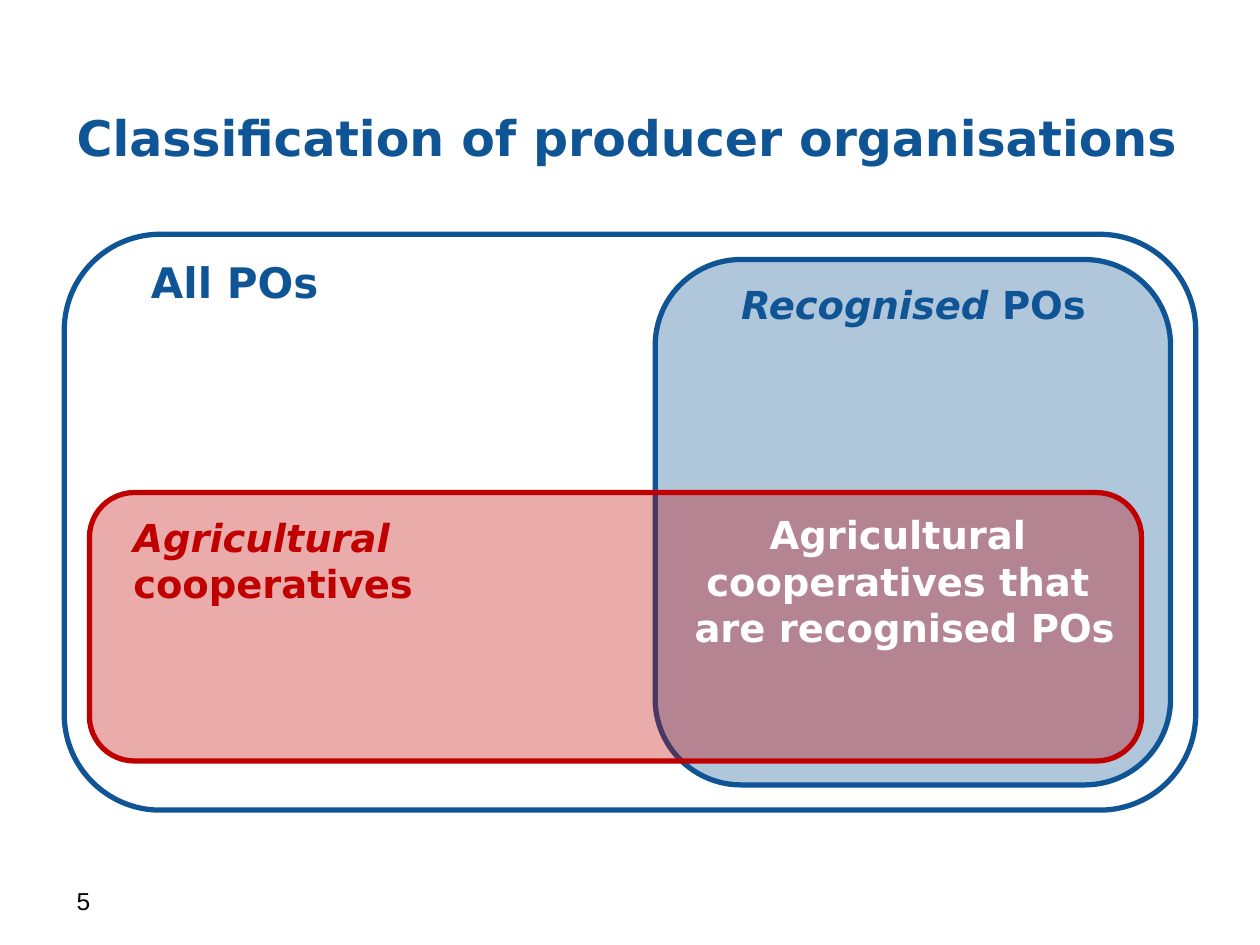
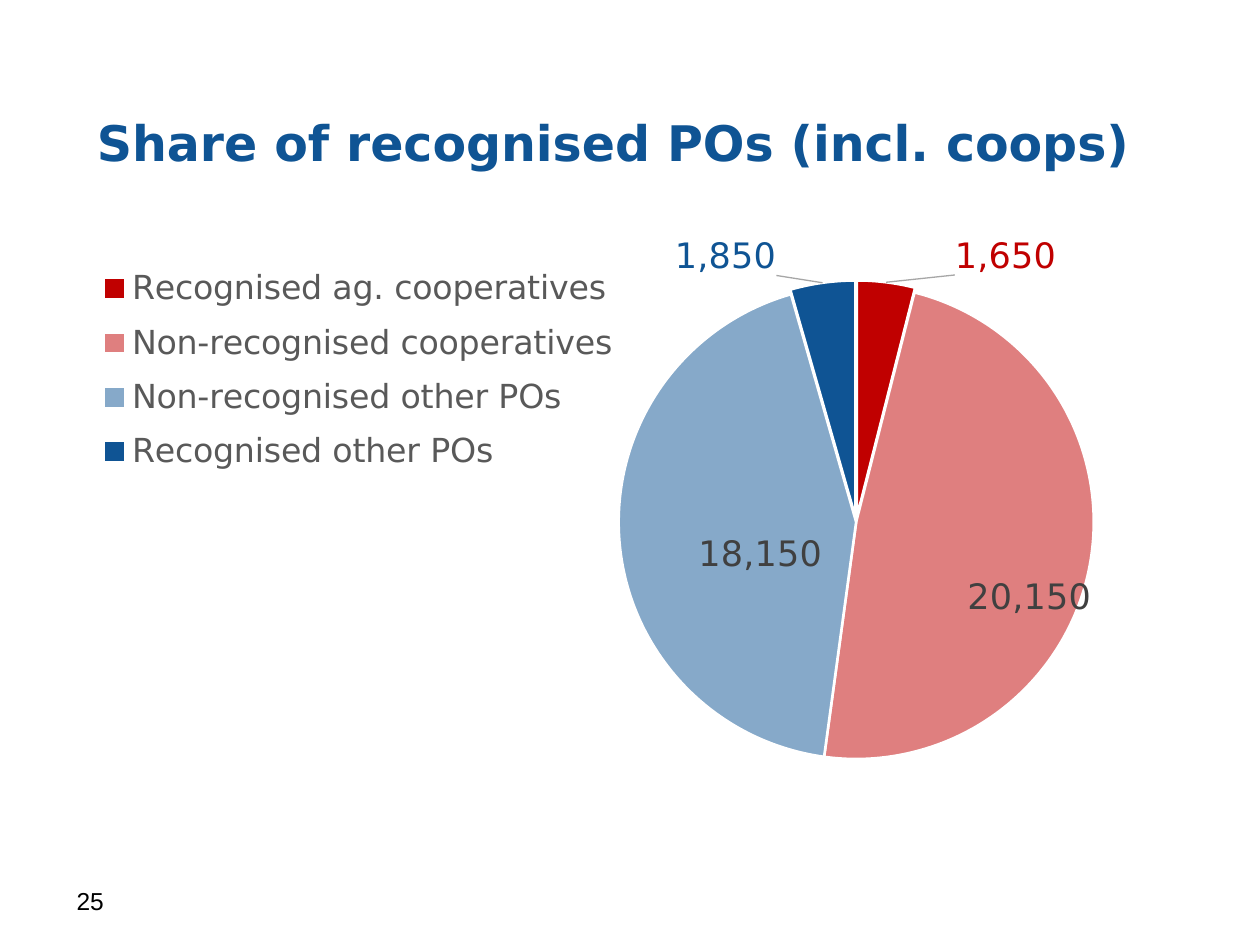
import pptx
import pptx.chart.data
import pptx.dml.color
import pptx.enum.chart
import pptx.enum.shapes
import pptx.enum.text
import pptx.util
from dataclasses import dataclass
from lxml import etree
from pptx.oxml.ns import qn

Inches = pptx.util.Inches
Pt = pptx.util.Pt
ALIGN = pptx.enum.text.PP_ALIGN
ANCHOR = pptx.enum.text.MSO_ANCHOR
LABEL_POSITION = pptx.enum.chart.XL_LABEL_POSITION


@dataclass(frozen=True)
class Theme:
    blue: str = "0F5494"
    red: str = "C00000"
    white: str = "FFFFFF"
    black: str = "000000"
    legend_grey: str = "595959"
    label_grey: str = "404040"
    leader_grey: str = "A6A6A6"
    font: str = "DejaVu Sans"
    number_font: str = "Arial"
    title: int = 28
    heading: int = 24
    group: int = 22
    label: int = 20
    legend: int = 19
    page_number: int = 14


THEME = Theme()


# Formatting helpers
def rgb(color):
    return pptx.dml.color.RGBColor.from_string(color)


def style_font(font, size, color, face=THEME.font, bold=False, italic=False):
    font.name, font.size, font.color.rgb = face, Pt(size), rgb(color)
    font.bold, font.italic = bold, italic


def set_alpha(owner, percent):
    """Make the fill of a shape or chart point see-through."""
    for color in owner.xpath("./*[local-name()='spPr']/a:solidFill/a:srgbClr"):
        etree.SubElement(color, qn("a:alpha"), val=str(percent * 1000))


def set_layout(owner, index, **settings):
    """Give a chart part a manual layout as fractions of the chart."""
    for old in owner.findall(qn("c:layout")):
        owner.remove(old)
    layout = etree.Element(qn("c:layout"))
    manual = etree.SubElement(layout, qn("c:manualLayout"))
    for tag, value in settings.items():
        etree.SubElement(manual, qn("c:" + tag), val=str(value))
    owner.insert(index, layout)


# Elements
def add_text(slide, box, text, size, color, face=THEME.font, bold=True,
             lead="", align=ALIGN.LEFT, anchor=ANCHOR.TOP, wrap=False):
    """Add text after an optional italic lead; a newline breaks the line."""
    frame = slide.shapes.add_textbox(*map(Inches, box)).text_frame
    frame.word_wrap = wrap
    frame.vertical_anchor = anchor
    paragraph = frame.paragraphs[0]
    paragraph.alignment = align
    for part, italic in ((lead, True), (text, False)):
        for number, line in enumerate(part.split("\n")):
            if number:
                paragraph.add_line_break()
            if line:
                run = paragraph.add_run()
                run.text = line
                style_font(run.font, size, color, face, bold, italic)


def add_set(slide, box, color, alpha=None):
    """Add a rounded region of the set diagram."""
    region = slide.shapes.add_shape(
        pptx.enum.shapes.MSO_SHAPE.ROUNDED_RECTANGLE, *map(Inches, box))
    region.shadow.inherit = False
    region.line.color.rgb = rgb(color)
    region.line.width = Pt(3)
    if alpha is None:
        region.fill.background()
    else:
        region.fill.solid()
        region.fill.fore_color.rgb = rgb(color)
        set_alpha(region._element, alpha)


def add_page(deck, title, title_at, number):
    slide = deck.slides.add_slide(deck.slide_layouts[6])
    add_text(slide, (*title_at, 8.98, 0.93), title, THEME.title, THEME.blue,
             anchor=ANCHOR.MIDDLE, wrap=True)
    add_text(slide, (0.51, 6.98, 2.33, 0.52), str(number), THEME.page_number,
             THEME.black, face=THEME.number_font, bold=False, wrap=True)
    return slide


def style_slice(series, index, color, alpha, explosion, label_color, position, shift):
    point = series.points[index]
    point.format.fill.solid()
    point.format.fill.fore_color.rgb = rgb(color)
    point.format.line.color.rgb = rgb(THEME.white)
    point.format.line.width = Pt(1.5)
    slice_xml = series._element.xpath(f"c:dPt[c:idx/@val='{index}']")[0]
    if alpha:
        set_alpha(slice_xml, alpha)
    if explosion:
        offset = etree.Element(qn("c:explosion"), val=str(explosion))
        slice_xml.find(qn("c:spPr")).addprevious(offset)
    # Value label, moved from its usual place
    style_font(point.data_label.font, THEME.label, label_color)
    point.data_label.position = position
    label_xml = series._element.xpath(f"c:dLbls/c:dLbl[c:idx/@val='{index}']")[0]
    set_layout(label_xml, 1, x=shift[0], y=shift[1])


def add_leader_lines(labels_xml):
    show = labels_xml.find(qn("c:showLeaderLines"))
    if show is None:
        show = etree.SubElement(labels_xml, qn("c:showLeaderLines"))
    show.set("val", "1")
    leaders = etree.Element(qn("c:leaderLines"))
    show.addnext(leaders)
    line = etree.SubElement(etree.SubElement(leaders, qn("c:spPr")), qn("a:ln"), w="9525")
    fill = etree.SubElement(line, qn("a:solidFill"))
    etree.SubElement(fill, qn("a:srgbClr"), val=THEME.leader_grey)


def add_pie(slide, box, shares, slices):
    data = pptx.chart.data.CategoryChartData(number_format="#,##0")
    data.categories = list(shares)
    data.add_series("Series 1", list(shares.values()))
    chart = slide.shapes.add_chart(
        pptx.enum.chart.XL_CHART_TYPE.PIE, *map(Inches, box), data).chart
    chart.has_title = False
    style_font(chart.font, 10, THEME.black)
    plot = chart.plots[0]
    plot.vary_by_categories = True
    set_layout(chart._chartSpace.xpath(".//c:plotArea")[0], 0, layoutTarget="inner",
               xMode="edge", yMode="edge", x=0.49, y=0.08, w=0.42, h=0.82)

    # Legend beside the pie
    chart.has_legend = True
    chart.legend.position = pptx.enum.chart.XL_LEGEND_POSITION.BOTTOM
    chart.legend.include_in_layout = False
    style_font(chart.legend.font, THEME.legend, THEME.legend_grey)
    set_layout(chart.legend._element, 1, xMode="edge", yMode="edge",
               x=0.01, y=0.03, w=0.5, h=0.4)

    # Slices and their labels
    series = plot.series[0]
    labels = series.data_labels
    labels.show_value = True
    labels.number_format = "#,##0"
    labels.number_format_is_linked = False
    style_font(labels.font, THEME.label, THEME.label_grey)
    add_leader_lines(series._element.find(qn("c:dLbls")))
    for index, look in enumerate(slices):
        style_slice(series, index, *look)


# Slides
def build_classification(deck):
    slide = add_page(deck, "Classification of producer organisations", (0.51, 0.62), 5)
    add_set(slide, (0.51, 1.86, 8.98, 4.57), THEME.blue)
    add_text(slide, (1.1, 1.99, 1.66, 0.5), "All POs", THEME.heading, THEME.blue)
    add_set(slide, (5.2, 2.06, 4.09, 4.17), THEME.blue, alpha=33)
    add_text(slide, (5.77, 2.18, 2.96, 0.47), " POs", THEME.group, THEME.blue,
             lead="Recognised", align=ALIGN.CENTER)
    add_set(slide, (0.71, 3.91, 8.35, 2.13), THEME.red, alpha=33)
    add_text(slide, (0.96, 4.03, 2.42, 0.84), "cooperatives", THEME.group, THEME.red,
             lead="Agricultural \n")
    add_text(slide, (5.41, 4.01, 3.54, 1.21),
             "Agricultural \ncooperatives that \nare recognised POs",
             THEME.group, THEME.white, align=ALIGN.CENTER)


def build_shares(deck):
    slide = add_page(deck, "Share of recognised POs (incl. coops)", (0.67, 0.66), 25)
    shares = {
        "Recognised ag. cooperatives": 1650,
        "Non-recognised cooperatives": 20150,
        "Non-recognised other POs": 18150,
        "Recognised other POs": 1850,
    }
    outside, center = LABEL_POSITION.OUTSIDE_END, LABEL_POSITION.CENTER
    # Colour, opacity, explosion, label colour, label place, label shift
    slices = [
        (THEME.red, None, 2, THEME.red, outside, (0.06, 0)),
        (THEME.red, 50, None, THEME.label_grey, center, (0.05, 0.09)),
        (THEME.blue, 50, None, THEME.label_grey, center, (0.02, 0.04)),
        (THEME.blue, None, 2, THEME.blue, outside, (-0.04, 0)),
    ]
    add_pie(slide, (0.51, 1.86, 8.98, 4.65), shares, slices)


def main():
    deck = pptx.Presentation()
    deck.slide_width, deck.slide_height = Inches(10), Inches(7.5)
    build_classification(deck)
    build_shares(deck)
    deck.save("out.pptx")


if __name__ == "__main__":
    main()
